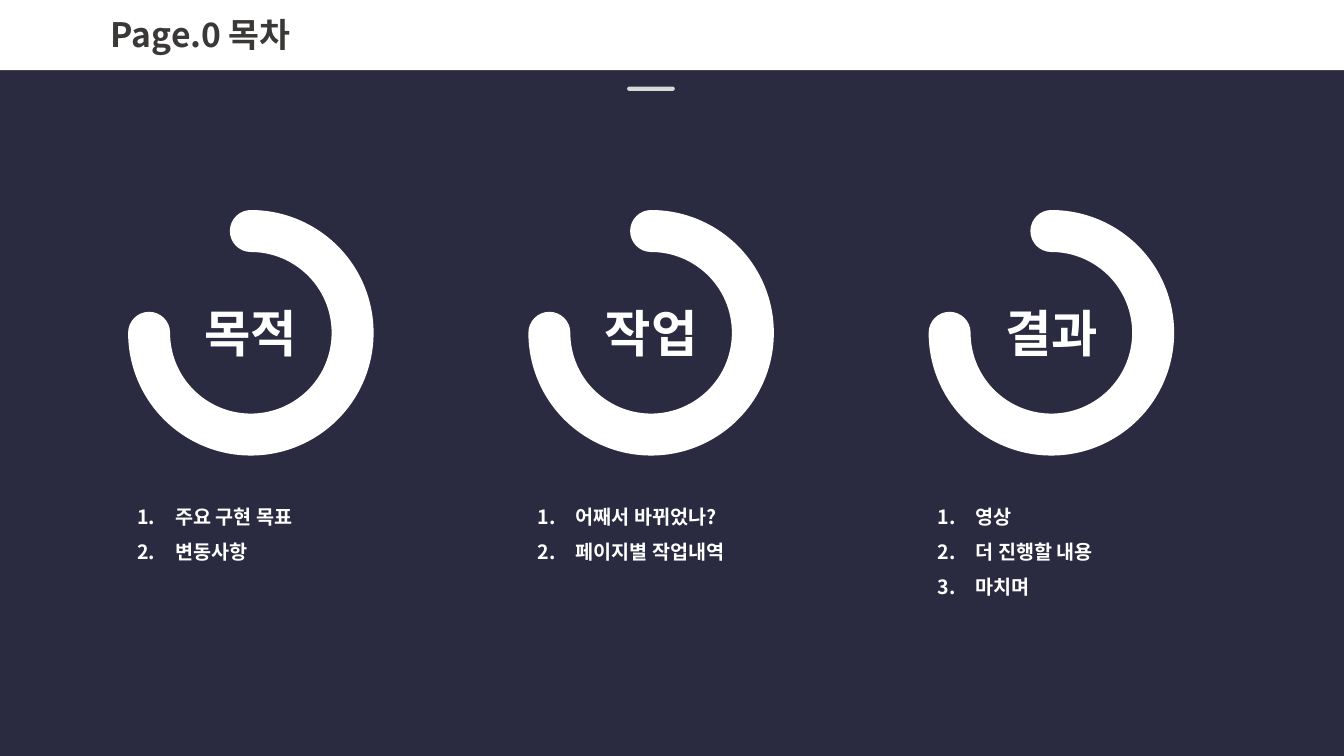
from dataclasses import dataclass

from lxml import etree
from pptx import Presentation
from pptx.dml.color import RGBColor
from pptx.enum import shapes, text
from pptx.oxml import ns
from pptx.util import Pt


@dataclass(frozen=True)
class Theme:
    background: str = "2A2B40"
    white: str = "FFFFFF"
    title_color: str = "3B3838"
    accent: str = "D9D9D9"
    heading_font: str = "Noto Sans CJK KR"
    list_font: str = "Noto Sans CJK SC"
    title_size: float = 24
    ring_size: float = 36
    list_size: float = 14


def write_text(paragraph, content, *, font, size, color):
    run = paragraph.add_run()
    run.text = content
    run.font.name = font
    run.font.size = Pt(size)
    run.font.bold = True
    run.font.color.rgb = RGBColor.from_string(color)
    east_asian = etree.SubElement(run.font._element, ns.qn("a:ea"))
    east_asian.set("typeface", font)


class AgendaSlide:
    def __init__(self, presentation, theme):
        self.theme = theme
        self.slide = presentation.slides.add_slide(presentation.slide_layouts[6])
        fill = self.slide.background.fill
        fill.solid()
        fill.fore_color.rgb = RGBColor.from_string(theme.background)

    def add_shape(self, kind, left, top, width, height, color=None):
        shape = self.slide.shapes.add_shape(
            kind, Pt(left), Pt(top), Pt(width), Pt(height))
        shape.shadow.inherit = False
        shape.line.fill.background()
        if color:
            shape.fill.solid()
            shape.fill.fore_color.rgb = RGBColor.from_string(color)
        else:
            shape.fill.background()
        return shape

    def add_header(self, title):
        theme = self.theme
        header = self.add_shape(
            shapes.MSO_SHAPE.RECTANGLE, 0, -2.2, 960, 52.4, theme.white)
        header.text_frame.vertical_anchor = text.MSO_ANCHOR.MIDDLE
        paragraph = header.text_frame.paragraphs[0]
        paragraph.alignment = text.PP_ALIGN.LEFT
        paragraph._p.get_or_add_pPr().set("marL", str(Pt(72)))
        write_text(paragraph, title, font=theme.heading_font,
                   size=theme.title_size, color=theme.title_color)

    def add_accent_bar(self, left, top, width, height):
        bar = self.add_shape(shapes.MSO_SHAPE.ROUNDED_RECTANGLE,
                             left, top, width, height, self.theme.accent)
        bar.adjustments[0] = 0.5

    def add_ring(self, label, left, top, diameter):
        theme = self.theme
        box = (left, top, diameter, diameter)
        disc = self.add_shape(shapes.MSO_SHAPE.OVAL, *box)
        disc.text_frame.vertical_anchor = text.MSO_ANCHOR.MIDDLE
        paragraph = disc.text_frame.paragraphs[0]
        paragraph.alignment = text.PP_ALIGN.CENTER
        write_text(paragraph, label, font=theme.heading_font,
                   size=theme.ring_size, color=theme.white)

        arc = self.add_shape(shapes.MSO_SHAPE.ARC, *box)
        arc.adjustments[0] = 162
        arc.adjustments[1] = 108
        arc.line.color.rgb = RGBColor.from_string(theme.white)
        arc.line.width = Pt(30)
        arc.line._get_or_add_ln().set("cap", "rnd")

    def add_numbered_list(self, items, left, top, width):
        theme = self.theme
        height = 5 + 25.2 * len(items)
        frame = self.slide.shapes.add_textbox(
            Pt(left), Pt(top), Pt(width), Pt(height)).text_frame
        frame.word_wrap = True
        frame.auto_size = text.MSO_AUTO_SIZE.SHAPE_TO_FIT_TEXT
        for index, item in enumerate(items):
            paragraph = frame.add_paragraph() if index else frame.paragraphs[0]
            paragraph.line_spacing = 1.5
            properties = paragraph._p.get_or_add_pPr()
            properties.set("marL", str(Pt(27)))
            properties.set("indent", str(-Pt(27)))
            numbering = etree.SubElement(properties, ns.qn("a:buAutoNum"))
            numbering.set("type", "arabicPeriod")
            write_text(paragraph, item, font=theme.list_font,
                       size=theme.list_size, color=theme.white)


SECTIONS = {
    "목적": ["주요 구현 목표", "변동사항"],
    "작업": ["어째서 바뀌었나?", "페이지별 작업내역"],
    "결과": ["영상", "더 진행할 내용", "마치며"],
}
FIRST_CENTER, COLUMN_PITCH = 179.2, 285.9
RING_DIAMETER, LIST_WIDTH = 145.4, 176.4


def main():
    presentation = Presentation()
    presentation.slide_width, presentation.slide_height = Pt(960), Pt(540)
    agenda = AgendaSlide(presentation, Theme())
    agenda.add_header("Page.0 목차")
    for column, (label, items) in enumerate(SECTIONS.items()):
        center = FIRST_CENTER + column * COLUMN_PITCH
        agenda.add_ring(label, center - RING_DIAMETER / 2, 165, RING_DIAMETER)
        agenda.add_numbered_list(items, center - LIST_WIDTH / 2, 348.5, LIST_WIDTH)
    agenda.add_accent_bar(448, 61.9, 34, 3)
    presentation.save("out.pptx")


if __name__ == "__main__":
    main()
